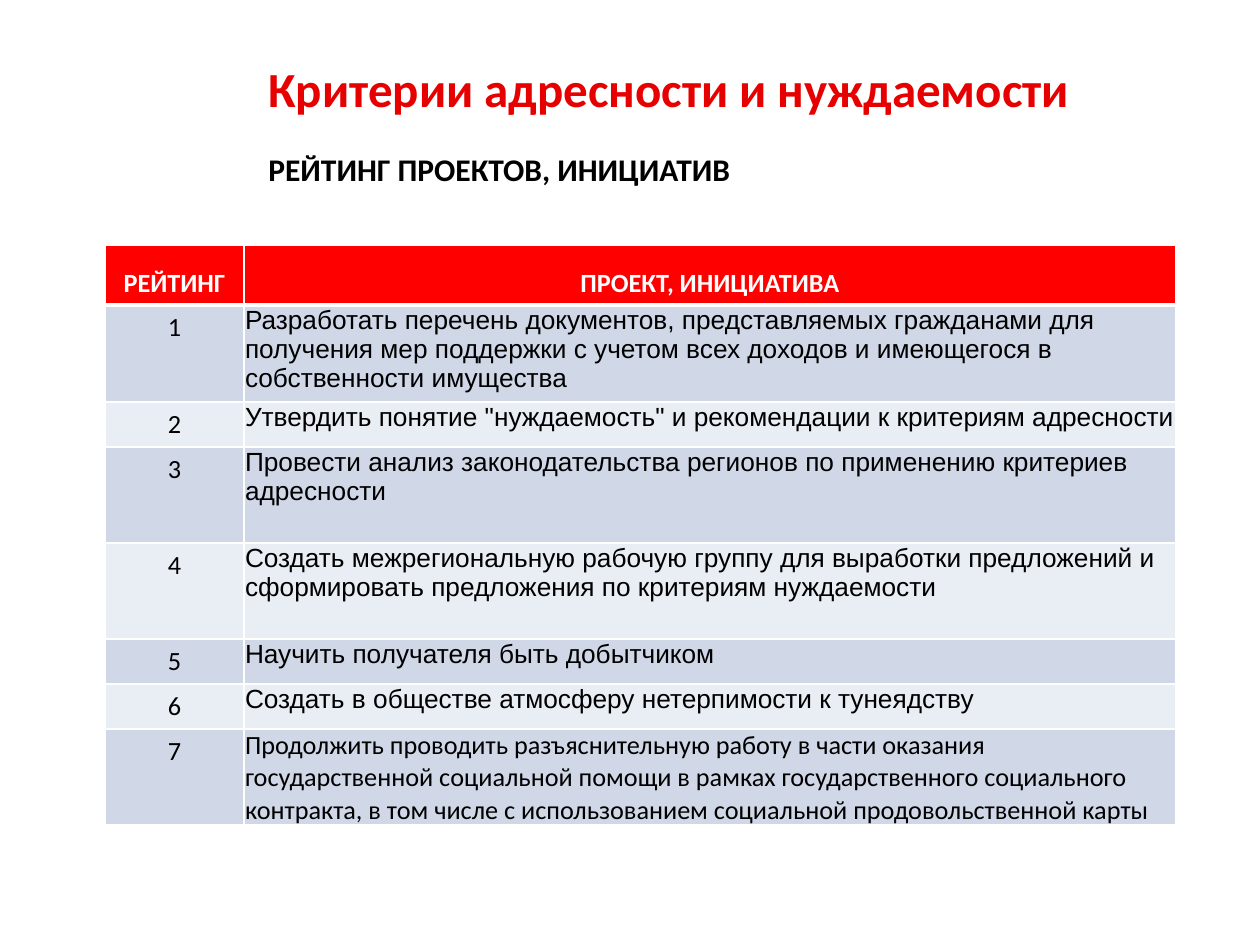
from lxml import etree
from pptx import Presentation
from pptx import util as u
from pptx.dml.color import RGBColor
from pptx.enum import text
from pptx.oxml.ns import qn

COLORS = {
    "title": "E60000", "head": "FF0000", "ink": "000000",
    "white": "FFFFFF", "odd": "D0D8E8", "even": "E9EDF4",
}
COLS = [139, 932]
HEAD = ["РЕЙТИНГ", "ПРОЕКТ, ИНИЦИАТИВА"]
HEAD_H = 58
# Project, row height, font
ROWS = [
    ("Разработать перечень документов, представляемых гражданами для получения мер "
     "поддержки с учетом всех доходов и имеющегося в собственности имущества", 97, "Arial"),
    ('Утвердить понятие "нуждаемость" и рекомендации к критериям адресности', 45, "Arial"),
    ("Провести анализ законодательства регионов по применению критериев адресности",
     96, "Arial"),
    ("Создать межрегиональную рабочую группу для выработки предложений и "
     "сформировать предложения по критериям нуждаемости", 96, "Arial"),
    ("Научить получателя быть добытчиком", 45, "Arial"),
    ("Создать в обществе атмосферу нетерпимости к тунеядству", 45, "Arial"),
    ("Продолжить проводить разъяснительную работу в части оказания государственной "
     "социальной помощи в рамках государственного социального контракта, в том числе "
     "с использованием социальной продовольственной карты", 95, "Calibri"),
]


def px(n):
    return u.Emu(round(n * 914400 / 126))


def rgb(name):
    return RGBColor.from_string(COLORS[name])


def add_run(para, words, size, color, font="Calibri", bold=False):
    run = para.add_run()
    run.text = words
    run.font.size = u.Pt(size)
    run.font.name = font
    run.font.bold = bold
    run.font.color.rgb = rgb(color)


def add_text(slide, box, words, size, color, wrap=True, anchor=text.MSO_ANCHOR.TOP):
    frame = slide.shapes.add_textbox(*map(px, box)).text_frame
    frame.word_wrap = wrap
    frame.vertical_anchor = anchor
    add_run(frame.paragraphs[0], words, size, color, bold=True)
    return frame


def set_edges(cell, base):
    """Draw white borders, with the bottom one of the given width in points."""
    props = cell._tc.get_or_add_tcPr()
    for i, (side, width) in enumerate(zip("LRTB", (1, 1, 1, base))):
        line = etree.Element(qn("a:ln" + side), w=str(u.Pt(width)))
        fill = etree.SubElement(line, qn("a:solidFill"))
        etree.SubElement(fill, qn("a:srgbClr"), val=COLORS["white"])
        props.insert(i, line)


def fill_cell(cell, words, fill, color="ink", font="Calibri", bold=False,
              center=True, base=1):
    cell.fill.solid()
    cell.fill.fore_color.rgb = rgb(fill)
    set_edges(cell, base)
    para = cell.text_frame.paragraphs[0]
    if center:
        para.alignment = text.PP_ALIGN.CENTER
    add_run(para, words, 15, color, font, bold)
    return para


def add_rating(slide, left, top):
    high = [HEAD_H] + [row[1] for row in ROWS]
    table = slide.shapes.add_table(
        len(high), len(COLS), px(left), px(top), px(sum(COLS)), px(sum(high))).table
    table.horz_banding = False
    for col, wide in zip(table.columns, COLS):
        col.width = px(wide)
    for row, tall in zip(table.rows, high):
        row.height = px(tall)

    # Header row
    for c, words in enumerate(HEAD):
        para = fill_cell(table.cell(0, c), words, "head", "white", bold=True, base=3)
        para.line_spacing = 1.5

    # Ranked projects
    for n, (words, _, font) in enumerate(ROWS, 1):
        band = "odd" if n % 2 else "even"
        fill_cell(table.cell(n, 0), str(n), band)
        cell = table.cell(n, 1)
        cell.margin_left = cell.margin_right = cell.margin_top = px(1)
        cell.margin_bottom = 0
        fill_cell(cell, words, band, font=font, center=False)


def main():
    deck = Presentation()
    deck.slide_width, deck.slide_height = px(1260), px(945)
    slide = deck.slides.add_slide(deck.slide_layouts[6])

    # Headings
    sub = add_text(slide, (256, 144, 493, 50), "РЕЙТИНГ ПРОЕКТОВ, ИНИЦИАТИВ",
                   18, "ink", wrap=False)
    sub.auto_size = text.MSO_AUTO_SIZE.SHAPE_TO_FIT_TEXT
    add_text(slide, (256, 63, 901, 49), "Критерии адресности и нуждаемости",
             28, "title", anchor=text.MSO_ANCHOR.MIDDLE)

    # Rating table
    add_rating(slide, 105, 245)
    deck.save("out.pptx")


if __name__ == "__main__":
    main()
